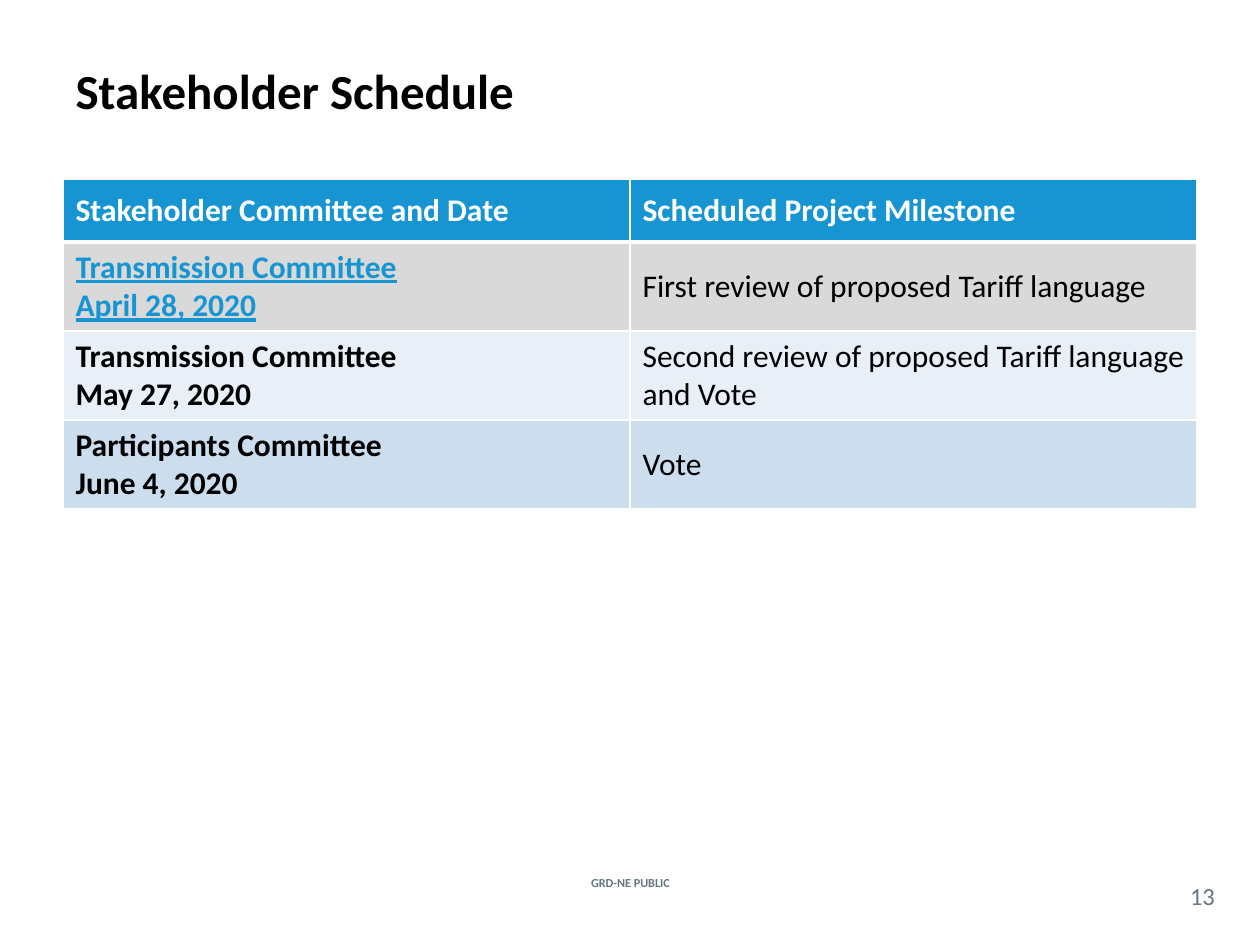
from lxml.etree import SubElement
from pptx import Presentation
from pptx.dml.color import RGBColor
from pptx.enum.text import MSO_ANCHOR as Anchor, PP_ALIGN as Align
from pptx.oxml.ns import qn
from pptx.util import Emu, Pt

SCALE = 914400 / 126
FONT = "Calibri"
BLACK = RGBColor(0x00, 0x00, 0x00)
WHITE = RGBColor(0xFF, 0xFF, 0xFF)
SLATE = RGBColor(0x62, 0x77, 0x7F)
BLUE = RGBColor(0x17, 0x95, 0xD2)
GREY = RGBColor(0xD9, 0xD9, 0xD9)
PALE_BLUE = RGBColor(0xE8, 0xEF, 0xF7)
LIGHT_BLUE = RGBColor(0xCC, 0xDD, 0xEE)

HEADINGS = ("Stakeholder Committee and Date", "Scheduled Project Milestone")
MEETINGS = (
    ("Transmission Committee", "April 28, 2020", "First review of proposed Tariff language", GREY, BLUE),
    ("Transmission Committee", "May 27, 2020", "Second review of proposed Tariff language and Vote", PALE_BLUE, BLACK),
    ("Participants Committee", "June 4, 2020", "Vote", LIGHT_BLUE, BLACK),
)


def px(length):
    """Turn pixels into EMU."""
    return Emu(round(length * SCALE))


def write(frame, lines, size, color, bold=False, underline=False, align=Align.LEFT):
    """Write each line as a paragraph with one formatted run."""
    frame.word_wrap = True
    for index, line in enumerate(lines):
        paragraph = frame.paragraphs[0] if index == 0 else frame.add_paragraph()
        paragraph.alignment = align
        run = paragraph.add_run()
        run.text = line
        font = run.font
        font.name, font.size, font.bold, font.underline = FONT, Pt(size), bold, underline
        font.color.rgb = color


def add_title(slide, box, text):
    """Place the slide title."""
    title = slide.shapes.title
    title.left, title.top, title.width, title.height = map(px, box)
    title.text_frame.vertical_anchor = Anchor.MIDDLE
    write(title.text_frame, [text], 28, BLACK, bold=True)


def add_label(slide, box, text, size, bold=False):
    """Place a centred footer label without margins."""
    frame = slide.shapes.add_textbox(*map(px, box)).text_frame
    frame.margin_left = frame.margin_right = frame.margin_top = frame.margin_bottom = 0
    frame.vertical_anchor = Anchor.MIDDLE
    write(frame, [text], size, SLATE, bold=bold, align=Align.CENTER)


def style_cell(cell, fill, top=1, bottom=1):
    """Give a cell white borders and a solid fill."""
    properties = cell._tc.get_or_add_tcPr()
    for side, width in (("L", 1), ("R", 1), ("T", top), ("B", bottom)):
        line = SubElement(properties, qn(f"a:ln{side}"), w=str(Pt(width)))
        solid = SubElement(line, qn("a:solidFill"))
        SubElement(solid, qn("a:srgbClr"), val=str(WHITE))
    cell.fill.solid()
    cell.fill.fore_color.rgb = fill


def add_schedule(slide, box, header_height):
    """Place the table of committee meetings and milestones."""
    left, top, width, height = box
    table = slide.shapes.add_table(len(MEETINGS) + 1, len(HEADINGS), *map(px, box)).table
    table.horz_banding = False
    for column in table.columns:
        column.width = px(width / len(HEADINGS))
    for index, row in enumerate(table.rows):
        row.height = px((height - header_height) / len(MEETINGS) if index else header_height)

    for column, heading in enumerate(HEADINGS):
        cell = table.cell(0, column)
        style_cell(cell, BLUE, bottom=3)
        cell.vertical_anchor = Anchor.MIDDLE
        write(cell.text_frame, [heading], 18, WHITE, bold=True)

    for index, (committee, date, milestone, fill, color) in enumerate(MEETINGS, 1):
        meeting_cell, milestone_cell = table.cell(index, 0), table.cell(index, 1)
        for cell in (meeting_cell, milestone_cell):
            style_cell(cell, fill, top=3 if index == 1 else 1)
        write(meeting_cell.text_frame, [committee, date], 18, color, bold=True, underline=color == BLUE)
        milestone_cell.vertical_anchor = Anchor.MIDDLE
        write(milestone_cell.text_frame, [milestone], 18, BLACK)


def main():
    """Build and save the stakeholder schedule slide."""
    presentation = Presentation()
    presentation.slide_width, presentation.slide_height = px(1260), px(945)
    slide = presentation.slides.add_slide(presentation.slide_layouts[5])
    add_label(slide, (538, 872, 185, 21), "GRD-NE PUBLIC", 7, bold=True)
    add_title(slide, (63, 53, 1134, 73), "Stakeholder Schedule")
    add_label(slide, (1176, 877, 53, 37), "13", 14)
    add_schedule(slide, (63, 179, 1134, 330), 63)
    presentation.save("out.pptx")


if __name__ == "__main__":
    main()
